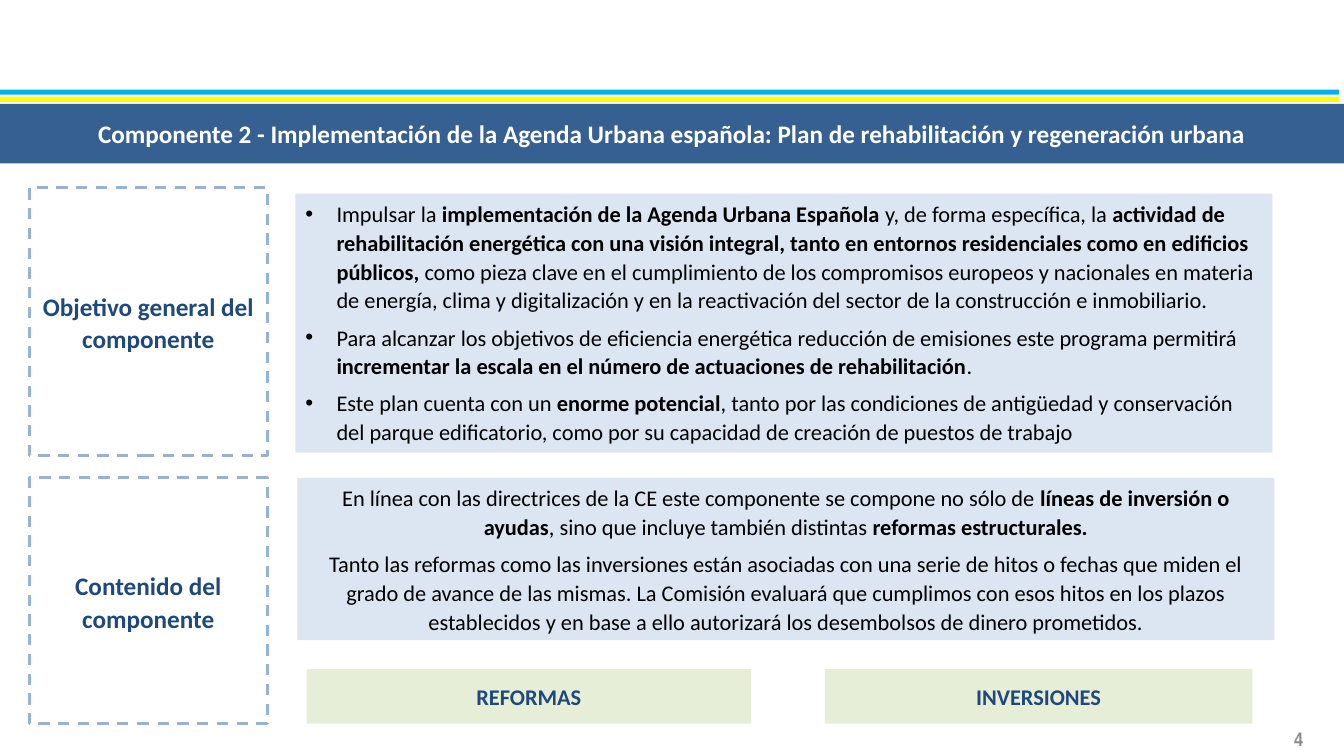
from pptx import Presentation
from pptx.dml.color import RGBColor
from pptx.enum.dml import MSO_LINE
from pptx.enum.shapes import MSO_SHAPE
from pptx.enum.text import MSO_ANCHOR, PP_ALIGN
from pptx.oxml.ns import qn
from pptx.util import Inches, Pt
from lxml.etree import SubElement

THEME = {
    "sky": "00B0F0", "yellow": "FFFF00", "band": "376092", "pale": "DCE6F2",
    "green": "C3D69B", "dash": "95B3D7", "navy": "1F497D", "black": "000000",
    "white": "FFFFFF", "grey": "8C8C8C",
    "font": "Calibri", "narrow": "Arial Narrow",
    "head": 18, "body": 16, "page": 14,
}

deck = Presentation()
deck.slide_width, deck.slide_height = Inches(13.33), Inches(7.5)
slide = deck.slides.add_slide(deck.slide_layouts[6])
COL, ROW = deck.slide_width / 100, deck.slide_height / 100  # 1 % of the slide


def add_box(left, top, width, height, fill=None):
    """Add a plain rectangle placed in percent of the slide."""
    box = slide.shapes.add_shape(
        MSO_SHAPE.RECTANGLE, int(left * COL), int(top * ROW),
        int(width * COL), int(height * ROW))
    box.shadow.inherit = False
    box.line.fill.background()
    if fill:
        box.fill.solid()
        box.fill.fore_color.rgb = RGBColor.from_string(THEME[fill])
    else:
        box.fill.background()
    return box


def write(box, texts, size, color, bold=None, font="font", bullet=False,
          align=PP_ALIGN.CENTER, anchor=MSO_ANCHOR.MIDDLE, space=1.0):
    """Fill a box with paragraphs; parts between asterisks are bold."""
    frame = box.text_frame
    frame.word_wrap = True
    frame.vertical_anchor = anchor
    for i, text in enumerate(texts):
        para = frame.add_paragraph() if i else frame.paragraphs[0]
        para.alignment = align
        para.line_spacing = space
        para.space_before = Pt(6 if i else 0)
        if bullet:
            props = para._p.get_or_add_pPr()
            props.set("marL", str(Inches(0.31)))
            props.set("indent", str(-Inches(0.31)))
            SubElement(props, qn("a:buFont"), typeface="Arial")
            SubElement(props, qn("a:buChar"), char="•")
        para.font.name = THEME[font]
        para.font.size = Pt(THEME[size])
        para.font.bold = bold
        para.font.color.rgb = RGBColor.from_string(THEME[color])
        for j, part in enumerate(text.split("*")):
            if part:
                run = para.add_run()
                run.text = part
                if j % 2:
                    run.font.bold = True


# Stripes and title band
for top, tint in ((11.87, "sky"), (12.8, "yellow")):
    add_box(0, top, 99.62, 0.67, tint)
title = add_box(0, 13.73, 100, 7.87, "band")
write(title, ["Componente 2 - Implementación de la Agenda Urbana española: "
              "Plan de rehabilitación y regeneración urbana"],
      "head", "white", bold=True)

# Dashed labels on the left
for top, height, text in ((24.8, 35.47, "Objetivo general del componente"),
                          (63.2, 32.53, "Contenido del componente")):
    label = add_box(2.18, top, 17.7, height)
    label.line.color.rgb = RGBColor.from_string(THEME["dash"])
    label.line.width = Pt(2)
    label.line.dash_style = MSO_LINE.DASH
    write(label, [text], "head", "navy", bold=True, space=1.07)

# General aim
goals = [
    "Impulsar la *implementación de la Agenda Urbana Española *y, de forma "
    "específica, la *actividad de rehabilitación energética con una visión "
    "integral, tanto en entornos residenciales como en edificios públicos, *"
    "como pieza clave en el cumplimiento de los compromisos europeos y "
    "nacionales en materia de energía, clima y digitalización y en la "
    "reactivación del sector de la construcción e inmobiliario.",
    "Para alcanzar los objetivos de eficiencia energética reducción de "
    "emisiones este programa permitirá *incrementar la escala en el número "
    "de actuaciones de rehabilitación*.",
    "Este plan cuenta con un *enorme potencial*, tanto por las condiciones de "
    "antigüedad y conservación del parque edificatorio, como por su capacidad "
    "de creación de puestos de trabajo",
]
write(add_box(21.98, 25.6, 72.69, 34.27, "pale"), goals, "body", "black",
      bullet=True, align=PP_ALIGN.LEFT, anchor=MSO_ANCHOR.TOP, space=1.07)

# Content
notes = [
    "En línea con las directrices de la CE este componente se compone no sólo "
    "de *líneas de inversión o ayudas*, sino que incluye también distintas "
    "*reformas estructurales.*",
    "Tanto las reformas como las inversiones están asociadas con una serie de "
    "hitos o fechas que miden el grado de avance de las mismas. La Comisión "
    "evaluará que cumplimos con esos hitos en los plazos establecidos y en "
    "base a ello autorizará los desembolsos de dinero prometidos.",
]
write(add_box(22.13, 63.2, 72.69, 21.47, "pale"), notes, "body", "black",
      anchor=MSO_ANCHOR.TOP, space=1.07)

# Two kinds of measure, on see-through green
for left, width, text in ((22.81, 33.08, "REFORMAS"),
                          (61.37, 31.81, "INVERSIONES")):
    tag = add_box(left, 88.53, width, 7.2, "green")
    tone = tag.fill._xPr.find(qn("a:solidFill"))[0]
    SubElement(tone, qn("a:alpha"), val="40000")
    write(tag, [text], "body", "navy", bold=True)

# Page number
page = slide.shapes.add_textbox(int(93.62 * COL), int(95.07 * ROW),
                                int(6 * COL), int(5.33 * ROW))
write(page, ["4"], "page", "grey", bold=True, font="narrow")

deck.save("out.pptx")
